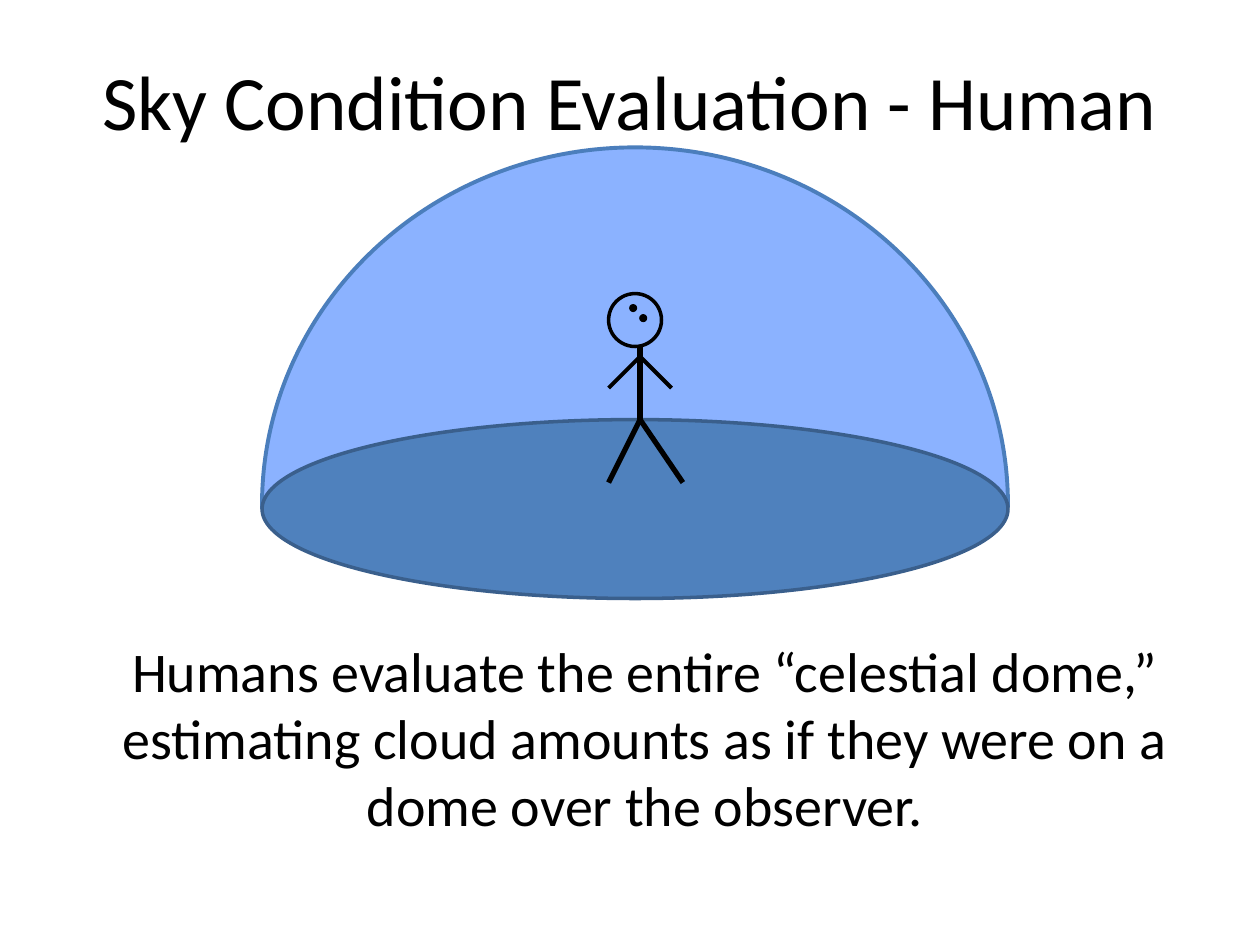
from lxml import etree
from pptx import Presentation
from pptx import util as u
from pptx.dml.color import RGBColor
from pptx.enum import shapes, text
from pptx.oxml.ns import qn

TITLE = "Sky Condition Evaluation - Human"
CAPTION = ("Humans evaluate the entire “celestial dome,” estimating cloud "
           "amounts as if they were on a dome over the observer.")
BLACK = "000000"
DOME = (2.08, 1.17, 5.92, 5.67)
GROUND = (2.08, 3.33, 5.92, 1.42)
HEAD = (4.83, 2.33, 0.42, 0.42)
EYES = [(5, 2.42, 0.05, 0.05), (5.08, 2.5, 0.05, 0.05)]
NECK, SHOULDER, HIP = (5.08, 2.75), (5.08, 2.83), (5.08, 3.33)
LIMBS = [
    (NECK, HIP, 3),
    (HIP, (4.83, 3.83), 3),
    (HIP, (5.42, 3.83), 3),
    (SHOULDER, (5.33, 3.08), 2.25),
    (SHOULDER, (4.83, 3.08), 2.25),
]


def rgb(color):
    """Turn a hex string into a colour."""
    return RGBColor.from_string(color)


def add_outline(parent, kind, box, fill, line, width):
    """Add a preset shape, unfilled when fill is None."""
    sp = parent.add_shape(kind, *map(u.Inches, box))
    sp.shadow.inherit = False
    if fill:
        sp.fill.solid()
        sp.fill.fore_color.rgb = rgb(fill)
    else:
        sp.fill.background()
    sp.line.color.rgb = rgb(line)
    sp.line.width = u.Pt(width)
    return sp


def add_limb(parent, start, end, width):
    """Add a straight black line without a shadow."""
    c = parent.add_connector(shapes.MSO_CONNECTOR.STRAIGHT, *map(u.Inches, start + end))
    c.line.color.rgb = rgb(BLACK)
    c.line.width = u.Pt(width)
    etree.SubElement(c._element.spPr, qn("a:effectLst"))


def write(sp, words, size):
    """Write one centred paragraph."""
    tf = sp.text_frame
    tf.word_wrap = True
    tf.text = words
    p = tf.paragraphs[0]
    p.alignment = text.PP_ALIGN.CENTER
    f = p.runs[0].font
    f.name, f.size, f.color.rgb = "Calibri", u.Pt(size), rgb(BLACK)


def main():
    """Build the slide."""
    prs = Presentation()
    prs.slide_width, prs.slide_height = u.Inches(10), u.Inches(7.5)
    s = prs.slides.add_slide(prs.slide_layouts[5])
    oval = shapes.MSO_SHAPE.OVAL

    title = s.shapes.title
    title.left, title.top, title.width, title.height = map(u.Inches, (0.5, 0.17, 9, 1.25))
    write(title, TITLE, 44)
    title.text_frame.vertical_anchor = text.MSO_ANCHOR.MIDDLE

    dome = add_outline(s.shapes, shapes.MSO_SHAPE.ARC, DOME, "8BB2FF", "4B7EBC", 2.25)
    dome.adjustments[0], dome.adjustments[1] = 107.56, 0.27
    add_outline(s.shapes, oval, GROUND, "4F81BD", "3A5F8C", 2)

    observer = s.shapes.add_group_shape().shapes
    for limb in LIMBS:
        add_limb(observer, *limb)
    add_outline(observer, oval, HEAD, None, BLACK, 2)
    for eye in EYES:
        add_outline(observer, oval, eye, BLACK, BLACK, 1)

    caption = s.shapes.add_textbox(*map(u.Inches, (0.58, 5, 9.08, 1.72)))
    write(caption, CAPTION, 32)
    caption.text_frame.auto_size = text.MSO_AUTO_SIZE.SHAPE_TO_FIT_TEXT
    prs.save("out.pptx")


if __name__ == "__main__":
    main()
